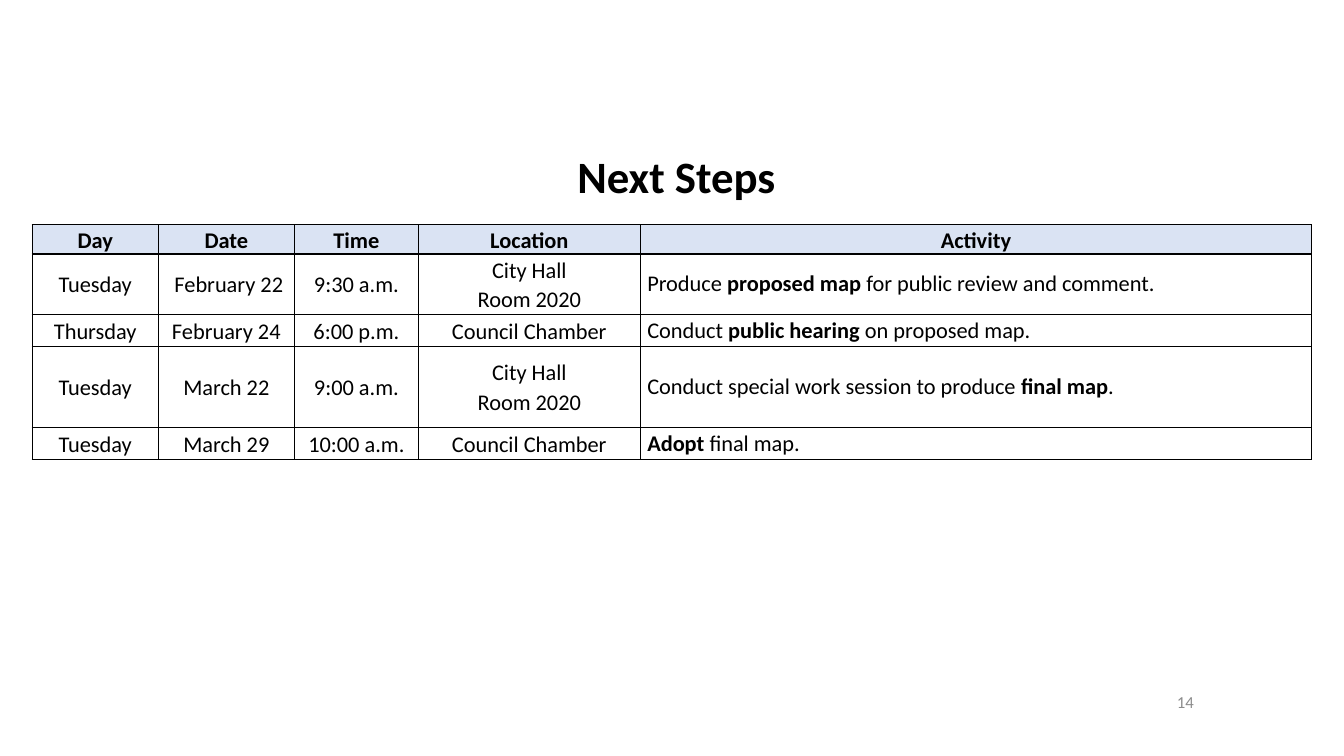
"""Build the Next Steps slide with its schedule table."""
from lxml import etree
from pptx import Presentation
from pptx.dml.color import RGBColor
from pptx.enum import text
from pptx.oxml import ns
from pptx.util import Inches, Pt

COLORS = {"black": "000000", "white": "FFFFFF", "header": "DAE3F3", "number": "8C8C8C"}
COLUMN_WIDTHS = [1.25, 1.35, 1.23, 2.2, 6.66]
ROW_HEIGHTS = [0.29, 0.6, 0.32, 0.8, 0.32]
HEADERS = ["Day", "Date", "Time", "Location", "Activity"]
STEPS = [
    ["Tuesday", " February 22", "9:30 a.m.", "City Hall\nRoom 2020",
     "Produce *proposed map *for public review and comment."],
    ["Thursday", "February 24", "6:00 p.m.", "Council Chamber",
     "Conduct *public hearing *on proposed map."],
    ["Tuesday", "March 22", "9:00 a.m.", "City Hall\nRoom 2020",
     "Conduct special work session to produce *final map*."],
    ["Tuesday", "March 29", "10:00 a.m.", "Council Chamber", "*Adopt *final map."],
]


def style_paragraph(paragraph, size, color, alignment, bold=None):
    paragraph.alignment = alignment
    paragraph.font.name = "Calibri"
    paragraph.font.size = Pt(size)
    paragraph.font.bold = bold
    paragraph.font.color.rgb = RGBColor.from_string(COLORS[color])


def add_borders(cell):
    properties = cell._tc.get_or_add_tcPr()
    for position, side in enumerate(["lnL", "lnR", "lnT", "lnB"]):
        line = etree.Element(ns.qn(f"a:{side}"), w=str(Pt(1)))
        fill = etree.SubElement(line, ns.qn("a:solidFill"))
        etree.SubElement(fill, ns.qn("a:srgbClr"), val=COLORS["black"])
        properties.insert(position, line)


presentation = Presentation()
presentation.slide_width = Inches(13.33)
presentation.slide_height = Inches(7.5)
slide = presentation.slides.add_slide(presentation.slide_layouts[5])

title = slide.shapes.title
title.left, title.top = Inches(0.32), Inches(1.47)
title.width, title.height = Inches(12.69), Inches(0.61)
title.text_frame.vertical_anchor = text.MSO_ANCHOR.MIDDLE
heading = title.text_frame.paragraphs[0]
style_paragraph(heading, 32, "black", text.PP_ALIGN.CENTER, True)
heading.line_spacing = 0.9
heading.add_run().text = " "
heading.runs[0].font.size = Pt(28)
heading.add_run().text = "Next Steps"

number_box = slide.shapes.add_textbox(Inches(8.94), Inches(6.76), Inches(3), Inches(0.4))
number_box.text_frame.word_wrap = True
number_box.text_frame.vertical_anchor = text.MSO_ANCHOR.MIDDLE
number = number_box.text_frame.paragraphs[0]
number.text = "14"
style_paragraph(number, 12, "number", text.PP_ALIGN.RIGHT)

table = slide.shapes.add_table(
    len(ROW_HEIGHTS), len(COLUMN_WIDTHS), Inches(0.32), Inches(2.23),
    Inches(sum(COLUMN_WIDTHS)), Inches(sum(ROW_HEIGHTS))).table
table.horz_banding = False
for column, width in zip(table.columns, COLUMN_WIDTHS):
    column.width = Inches(width)
for row, height in zip(table.rows, ROW_HEIGHTS):
    row.height = Inches(height)

for row_index, values in enumerate([HEADERS] + STEPS):
    is_header = row_index == 0
    for column_index, value in enumerate(values):
        cell = table.cell(row_index, column_index)
        is_activity = not is_header and column_index == len(HEADERS) - 1
        cell.vertical_anchor = text.MSO_ANCHOR.MIDDLE
        cell.margin_left = cell.margin_right = Inches(0.07)
        cell.margin_top = cell.margin_bottom = 0
        cell.fill.solid()
        cell.fill.fore_color.rgb = RGBColor.from_string(COLORS["header" if is_header else "white"])
        add_borders(cell)
        alignment = text.PP_ALIGN.LEFT if is_activity else text.PP_ALIGN.CENTER
        for line_index, line_text in enumerate(value.split("\n")):
            paragraph = cell.text_frame.add_paragraph() if line_index else cell.text_frame.paragraphs[0]
            style_paragraph(paragraph, 16, "black", alignment, is_header)
            paragraph.line_spacing = 1.0 if is_activity else 1.07
            for part_index, part in enumerate(line_text.split("*")):
                if part:
                    run = paragraph.add_run()
                    run.text = part
                    if part_index % 2:
                        run.font.bold = True

presentation.save("out.pptx")
